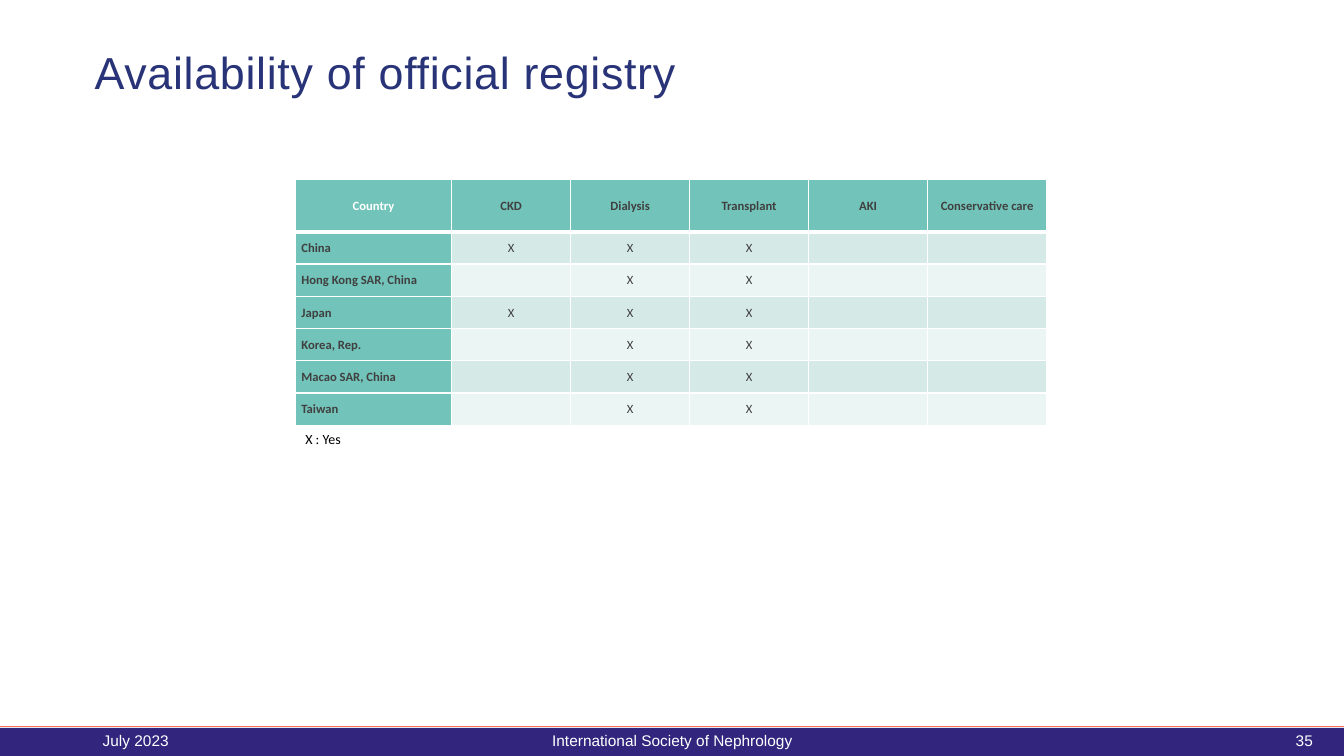
from lxml.etree import SubElement
from pptx import Presentation
from pptx.dml.color import RGBColor
from pptx.enum.shapes import MSO_CONNECTOR, MSO_SHAPE
from pptx.enum.text import MSO_ANCHOR as ANCHOR, PP_ALIGN as ALIGN
from pptx.oxml.ns import qn
from pptx.util import Inches, Pt

WHITE = RGBColor(0xFF, 0xFF, 0xFF)
BLACK = RGBColor(0, 0, 0)
GREY = RGBColor(0x40, 0x40, 0x40)
NAVY = RGBColor(0x28, 0x33, 0x78)
INDIGO = RGBColor(0x32, 0x25, 0x7E)
CORAL = RGBColor(0xFE, 0x70, 0x55)
TEAL = RGBColor(0x72, 0xC3, 0xB9)
BANDS = RGBColor(0xD5, 0xE9, 0xE6), RGBColor(0xEB, 0xF5, 0xF3)

SLIDE_W, SLIDE_H = 13.33, 7.5
COUNTRY_W, REGISTRY_W = 1.55, 1.18
HEADER_H, ROW_H = 0.52, 0.32

REGISTRIES = ["CKD", "Dialysis", "Transplant", "AKI", "Conservative care"]
AVAILABLE = {
    "China": {"CKD", "Dialysis", "Transplant"},
    "Hong Kong SAR, China": {"Dialysis", "Transplant"},
    "Japan": {"CKD", "Dialysis", "Transplant"},
    "Korea, Rep.": {"Dialysis", "Transplant"},
    "Macao SAR, China": {"Dialysis", "Transplant"},
    "Taiwan": {"Dialysis", "Transplant"},
}


def add_text(s, box, text, size, color, font="Arial", align=ALIGN.LEFT,
             anchor=ANCHOR.MIDDLE, wrap=True):
    tf = s.shapes.add_textbox(*map(Inches, box)).text_frame
    tf.word_wrap = wrap
    tf.vertical_anchor = anchor
    tf.text = text
    p = tf.paragraphs[0]
    p.alignment = align
    r = p.runs[0]
    r.font.name, r.font.size, r.font.color.rgb = font, Pt(size), color
    return p


def add_title(s, box, text):
    p = add_text(s, box, text, 32, NAVY)
    p.line_spacing = 0.9
    p.runs[0].font._element.set("spc", "50")


def set_borders(cell, bottom):
    """Draw white cell edges, with the bottom one as wide as given."""
    tcPr = cell._tc.get_or_add_tcPr()
    for i, (side, width) in enumerate(
            [("lnL", 1), ("lnR", 1), ("lnT", 1), ("lnB", bottom)]):
        ln = SubElement(tcPr, qn(f"a:{side}"), w=str(Pt(width)))
        fill = SubElement(ln, qn("a:solidFill"))
        SubElement(fill, qn("a:srgbClr"), val=str(WHITE))
        tcPr.remove(ln)
        tcPr.insert(i, ln)


def fill_cell(cell, text, fill, color=GREY, bold=False, align=ALIGN.CENTER,
              bottom=1):
    cell.fill.solid()
    cell.fill.fore_color.rgb = fill
    cell.vertical_anchor = ANCHOR.MIDDLE
    cell.margin_left = cell.margin_right = Inches(0.06)
    cell.margin_top = cell.margin_bottom = 0
    p = cell.text_frame.paragraphs[0]
    p.alignment, p.line_spacing = align, 1.07
    r = p.add_run()
    r.text = text
    r.font.name, r.font.size, r.font.bold = "Calibri", Pt(9), bold
    r.font.color.rgb = color
    set_borders(cell, bottom)


def add_registry_table(s, left, top):
    width = COUNTRY_W + REGISTRY_W * len(REGISTRIES)
    height = HEADER_H + ROW_H * len(AVAILABLE)
    table = s.shapes.add_table(
        len(AVAILABLE) + 1, len(REGISTRIES) + 1,
        *map(Inches, (left, top, width, height))).table
    table.horz_banding = False
    for i, col in enumerate(table.columns):
        col.width = Inches(REGISTRY_W if i else COUNTRY_W)
    for i, row in enumerate(table.rows):
        row.height = Inches(ROW_H if i else HEADER_H)

    for i, name in enumerate(["Country"] + REGISTRIES):
        fill_cell(table.cell(0, i), name, TEAL, GREY if i else WHITE,
                  bold=True, bottom=3)
    for i, (country, available) in enumerate(AVAILABLE.items(), 1):
        fill_cell(table.cell(i, 0), country, TEAL, bold=True, align=ALIGN.LEFT)
        for j, registry in enumerate(REGISTRIES, 1):
            mark = "X" if registry in available else ""
            fill_cell(table.cell(i, j), mark, BANDS[(i - 1) % 2])

    add_text(s, (left, top + height, 0.75, 0.27), "X : Yes", 10, BLACK,
             "Calibri", anchor=ANCHOR.TOP, wrap=False)


def add_footer(s, top):
    bar = s.shapes.add_shape(
        MSO_SHAPE.RECTANGLE,
        *map(Inches, (0, top, SLIDE_W, SLIDE_H - top)))
    bar.shadow.inherit = False
    bar.fill.solid()
    bar.fill.fore_color.rgb = INDIGO
    bar.line.fill.background()

    rule_y = Inches(top - 0.01)
    rule = s.shapes.add_connector(
        MSO_CONNECTOR.STRAIGHT, 0, rule_y, Inches(SLIDE_W), rule_y)
    rule.line.color.rgb, rule.line.width = CORAL, Pt(0.75)
    SubElement(rule._element.spPr, qn("a:effectLst"))

    for left, width, text, align in [
            (0.92, 3, "July 2023", ALIGN.LEFT),
            (4.42, 4.5, "International Society of Nephrology", ALIGN.CENTER),
            (9.42, 3.7, "35", ALIGN.RIGHT)]:
        add_text(s, (left, top - 0.07, width, 0.4), text, 11, WHITE,
                 align=align)


def main():
    prs = Presentation()
    prs.slide_width, prs.slide_height = Inches(SLIDE_W), Inches(SLIDE_H)
    s = prs.slides.add_slide(prs.slide_layouts[6])
    add_footer(s, 7.22)
    add_registry_table(s, 2.93, 1.78)
    add_title(s, (0.84, 0.39, 9.26, 0.71), "Availability of official registry")
    prs.save("out.pptx")


if __name__ == "__main__":
    main()
